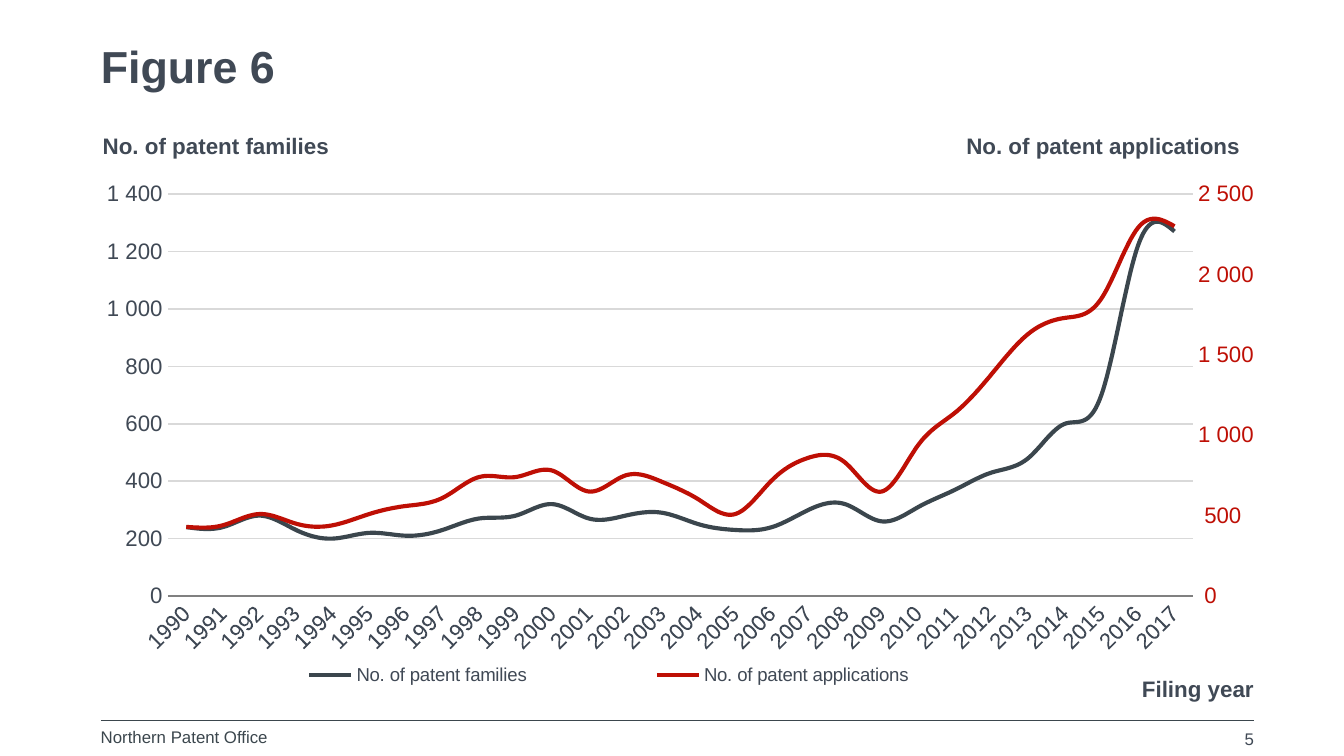
from copy import deepcopy

from lxml import etree
from pptx import Presentation
from pptx.chart.axis import ValueAxis
from pptx.chart.data import CategoryChartData
from pptx.dml.color import RGBColor
from pptx.enum.chart import XL_CHART_TYPE, XL_LEGEND_POSITION, XL_TICK_MARK
from pptx.enum.shapes import MSO_CONNECTOR
from pptx.enum.text import PP_ALIGN
from pptx.oxml.ns import qn
from pptx.util import Inches, Pt

LEFT, RIGHT = PP_ALIGN.LEFT, PP_ALIGN.RIGHT
NO_TICK = XL_TICK_MARK.NONE
FONT = "Arial"
COLORS = {"text": "404955", "dark": "3B464D", "red": "BE0F05",
          "grid": "D9D9D9", "axis": "808080"}

YEARS = [str(year) for year in range(1990, 2018)]
FAMILIES = [240, 240, 280, 230, 200, 220, 210, 230, 270, 280, 320, 270, 280, 290,
            250, 230, 240, 300, 320, 260, 310, 370, 430, 480, 600, 700, 1220, 1270]
APPLICATIONS = [430, 440, 510, 450, 440, 510, 560, 610, 740, 740, 780, 650, 750, 710,
                600, 510, 720, 860, 830, 650, 940, 1140, 1380, 1630, 1730, 1850, 2290, 2300]


def rgb(name):
    return RGBColor.from_string(COLORS[name])


def set_font(font, size, color="text", bold=False):
    font.name, font.size, font.bold = FONT, Pt(size), bold
    font.color.rgb = rgb(color)


def add_text(s, text, x, y, w, h, size=12, color="text", bold=False,
             align=LEFT, wrap=True, spacing=None):
    tf = s.shapes.add_textbox(Inches(x), Inches(y), Inches(w), Inches(h)).text_frame
    tf.margin_left = tf.margin_right = tf.margin_top = tf.margin_bottom = 0
    tf.word_wrap = wrap
    p = tf.paragraphs[0]
    p.alignment = align
    if spacing:
        p.line_spacing = Pt(spacing)
    r = p.add_run()
    r.text = text
    set_font(r.font, size, color, bold)


def set_layout(parent, index, x, y, w, h, inner=False):
    """Place a plot area or legend by fractions of the chart."""
    for old in parent.findall(qn("c:layout")):
        parent.remove(old)
    layout = etree.Element(qn("c:layout"))
    manual = etree.SubElement(layout, qn("c:manualLayout"))
    values = [("layoutTarget", "inner")] if inner else []
    values += [("xMode", "edge"), ("yMode", "edge"), ("x", x), ("y", y), ("w", w), ("h", h)]
    for tag, value in values:
        etree.SubElement(manual, qn(f"c:{tag}")).set("val", str(value))
    parent.insert(index, layout)


def add_second_axis(plot_area):
    """Move the last series to a right-hand value axis and return that axis."""
    first = plot_area.find(qn("c:lineChart"))
    second = deepcopy(first)
    first.remove(first.findall(qn("c:ser"))[-1])
    second.remove(second.findall(qn("c:ser"))[0])
    first.addnext(second)

    cat_id, val_id = "50010", "50020"
    for ax_id, value in zip(second.findall(qn("c:axId")), (cat_id, val_id)):
        ax_id.set("val", value)
    val_ax = plot_area.find(qn("c:valAx"))
    right = deepcopy(val_ax)
    hidden = deepcopy(plot_area.find(qn("c:catAx")))
    val_ax.addnext(right)
    right.addnext(hidden)
    for axis, own, cross in ((right, val_id, cat_id), (hidden, cat_id, val_id)):
        axis.find(qn("c:axId")).set("val", own)
        axis.find(qn("c:crossAx")).set("val", cross)
    hidden.find(qn("c:delete")).set("val", "1")
    right.find(qn("c:axPos")).set("val", "r")
    right.find(qn("c:crosses")).set("val", "max")
    return ValueAxis(right)


def format_value_axis(axis, maximum, unit, number_format, color):
    axis.minimum_scale, axis.maximum_scale, axis.major_unit = 0, maximum, unit
    axis.major_tick_mark = axis.minor_tick_mark = NO_TICK
    axis.format.line.fill.background()
    axis.tick_labels.number_format = number_format
    axis.tick_labels.number_format_is_linked = False
    set_font(axis.tick_labels.font, 12, color)


def add_patent_chart(s, x, y, w, h):
    data = CategoryChartData()
    data.categories = YEARS
    data.add_series("No. of patent families", FAMILIES)
    data.add_series("No. of patent applications", APPLICATIONS)
    chart = s.shapes.add_chart(XL_CHART_TYPE.LINE, Inches(x), Inches(y),
                               Inches(w), Inches(h), data).chart
    chart.has_title = False
    set_font(chart.font, 10)
    chart.plots[0].vary_by_categories = False
    for series, color in zip(chart.plots[0].series, ("dark", "red")):
        series.smooth = True
        series.format.line.width = Pt(2.25)
        series.format.line.color.rgb = rgb(color)

    plot_area = chart.plots[0]._element.getparent()
    years = chart.category_axis
    years.major_tick_mark = years.minor_tick_mark = NO_TICK
    years.format.line.color.rgb = rgb("axis")
    years.format.line.width = Pt(0.75)
    set_font(years.tick_labels.font, 12)
    body = plot_area.find(qn("c:catAx")).find(f"{qn('c:txPr')}/{qn('a:bodyPr')}")
    body.set("rot", "-2700000")
    body.set("vert", "horz")

    left = chart.value_axis  # taken while it is the only value axis
    right = add_second_axis(plot_area)
    right.has_major_gridlines = False
    format_value_axis(right, 2500, 500, r"#\ ##0", "red")
    format_value_axis(left, 1400, 200, r"#\ ###\ ##0", "text")
    left.has_major_gridlines = True
    grid = left.major_gridlines.format.line
    grid.color.rgb = rgb("grid")
    grid.width = Pt(0.75)

    chart.has_legend = True
    legend = chart.legend
    legend.position = XL_LEGEND_POSITION.BOTTOM
    legend.include_in_layout = False
    set_font(legend.font, 10)
    set_layout(plot_area, 0, 0.055, 0.03, 0.895, 0.781, inner=True)
    set_layout(legend._element, 1, 0.07, 0.93, 0.74, 0.07)


def add_footer(s, x, y, w):
    line = s.shapes.add_connector(MSO_CONNECTOR.STRAIGHT, Inches(x), Inches(y),
                                  Inches(x + w), Inches(y))
    line.line.color.rgb = rgb("dark")
    line.line.width = Pt(0.75)
    etree.SubElement(line._element.spPr, qn("a:effectLst"))
    add_text(s, "Northern Patent Office", x, y + 0.05, 1.7, 0.19, size=9, color="dark")
    add_text(s, "5", x + w - 2.33, y + 0.06, 2.33, 0.18, size=9, align=RIGHT)


def add_figure(s, x, y, w):
    """Chart with its axis headings above and the year heading below."""
    add_patent_chart(s, x, y + 0.35, w, 3.83)
    add_text(s, "Filing year", x + w - 0.84, y + 4.04, 0.84, 0.2,
             bold=True, align=RIGHT, wrap=False)
    add_text(s, "No. of patent applications", x + 6.44, y, 2.06, 0.2, bold=True, wrap=False)
    add_text(s, "No. of patent families", x, y, 1.7, 0.2,
             bold=True, align=RIGHT, wrap=False)


def main():
    prs = Presentation()
    prs.slide_width, prs.slide_height = Inches(10), Inches(10 * 9 / 16)
    s = prs.slides.add_slide(prs.slide_layouts[6])
    x, w = 0.75, 8.58
    add_footer(s, x, 5.36, w)
    add_text(s, "Figure 6", x, 0.3, w, 0.44, size=24, bold=True, spacing=28)
    add_figure(s, x, 0.98, w)
    prs.save("out.pptx")


if __name__ == "__main__":
    main()
